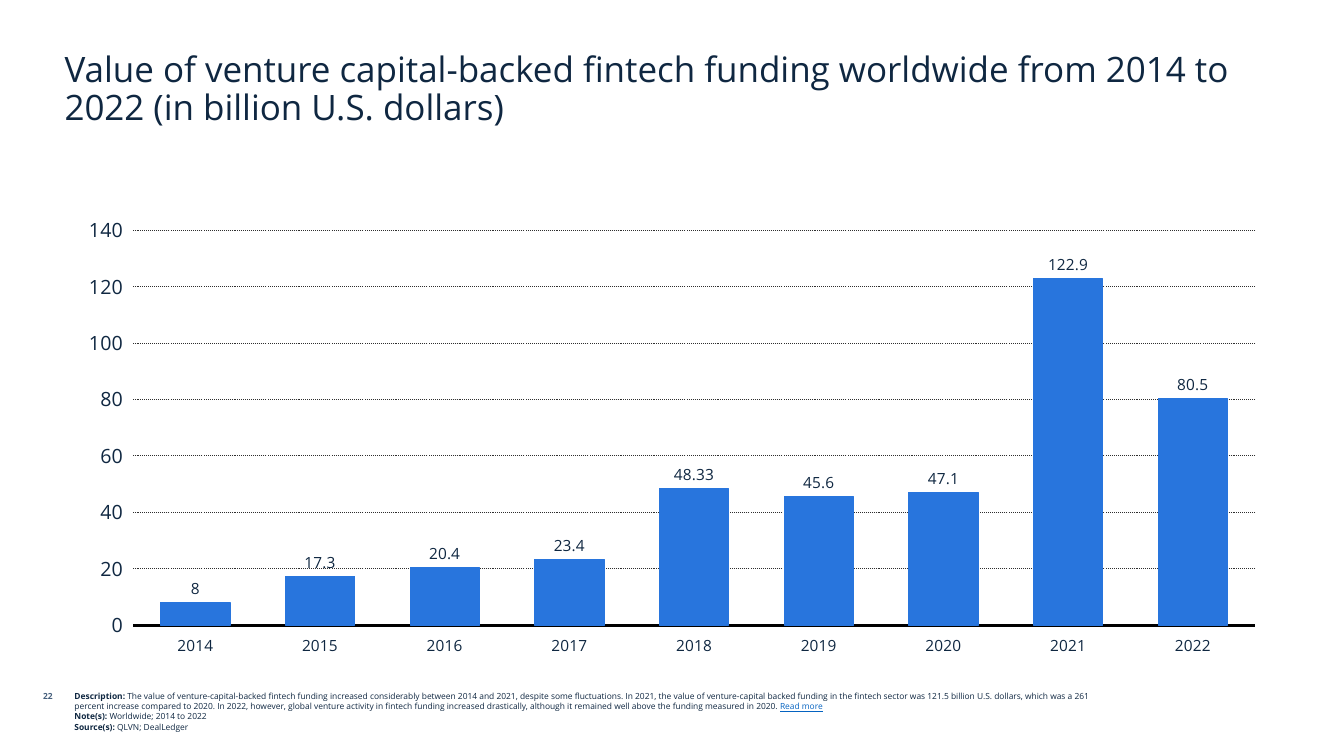
import pptx
import pptx.util
import pptx.chart.data
import pptx.dml.color
import pptx.enum.chart
import pptx.enum.dml
import pptx.enum.text

RGB = pptx.dml.color.RGBColor
NAVY = RGB(0x0F, 0x27, 0x41)
SLATE = RGB(0x45, 0x5F, 0x7C)
BLUE = RGB(0x28, 0x75, 0xDD)
LINK = RGB(0x05, 0x63, 0xC1)
GRID = RGB(0x2F, 0x2F, 0x2F)
BLACK = RGB(0, 0, 0)
FACE = "Open Sans"
WIDE, HIGH = pptx.util.Inches(13.33), pptx.util.Inches(7.5)
COLS, ROWS = 133.3, 75

FUNDS = {"2014": 8, "2015": 17.3, "2016": 20.4, "2017": 23.4, "2018": 48.33,
         "2019": 45.6, "2020": 47.1, "2021": 122.9, "2022": 80.5}
ABOUT = (
    "The value of venture-capital-backed fintech funding increased considerably "
    "between 2014 and 2021, despite some fluctuations. In 2021, the value of "
    "venture-capital backed funding in the fintech sector was 121.5 billion U.S. "
    "dollars, which was a 261 percent increase compared to 2020. In 2022, however, "
    "global venture activity in fintech funding increased drastically, although it "
    "remained well above the funding measured in 2020. ")
NOTES = [("Description: ", ABOUT, "Read more"),
         ("Note(s): ", "Worldwide; 2014 to 2022", ""),
         ("Source(s): ", "QLVN; DealLedger", "")]


def area(col, row, cols, rows):
    """Turn grid columns and rows into left, top, width and height."""
    return (int(WIDE * col / COLS), int(HIGH * row / ROWS),
            int(WIDE * cols / COLS), int(HIGH * rows / ROWS))


def style(font, size, color=NAVY, bold=False, under=None):
    """Format a font."""
    font.name, font.size, font.bold = FACE, pptx.util.Pt(size), bold
    font.color.rgb = color
    font.underline = under


def write(para, text, **look):
    """Add a formatted run to a paragraph."""
    run = para.add_run()
    run.text = text
    style(run.font, **look)


def frame(slide, box):
    """Add a wrapping text box and return its text frame."""
    text = slide.shapes.add_textbox(*box).text_frame
    text.word_wrap = True
    return text


def head(slide, box, text):
    """Place the slide title."""
    title = slide.shapes.title
    title.left, title.top, title.width, title.height = box
    body = title.text_frame
    body.word_wrap = True
    body.auto_size = pptx.enum.text.MSO_AUTO_SIZE.NONE
    body.vertical_anchor = pptx.enum.text.MSO_ANCHOR.BOTTOM
    para = body.paragraphs[0]
    para.alignment = pptx.enum.text.PP_ALIGN.LEFT
    para.line_spacing = 0.9
    write(para, text, size=25)


def bars(slide, box, funds):
    """Draw the column chart of yearly funding."""
    data = pptx.chart.data.CategoryChartData()
    data.categories = list(funds)
    data.add_series("Series 1", list(funds.values()))
    kind = pptx.enum.chart.XL_CHART_TYPE.COLUMN_CLUSTERED
    chart = slide.shapes.add_chart(kind, *box, data).chart
    chart.has_legend = chart.has_title = False
    style(chart.font, 11)
    plot = chart.plots[0]
    plot.gap_width, plot.overlap = 80, -30
    plot.vary_by_categories = False
    paint = plot.series[0].format
    paint.fill.solid()
    paint.fill.fore_color.rgb = BLUE
    paint.line.color.rgb = BLUE
    paint.line.width = pptx.util.Pt(0.75)

    plot.has_data_labels = True
    tags = plot.data_labels
    tags.show_value = True
    tags.position = pptx.enum.chart.XL_LABEL_POSITION.OUTSIDE_END
    style(tags.font, 11)

    years, scale = chart.category_axis, chart.value_axis
    for axis, size in ((years, 11), (scale, 14)):
        axis.major_tick_mark = pptx.enum.chart.XL_TICK_MARK.NONE
        axis.minor_tick_mark = pptx.enum.chart.XL_TICK_MARK.NONE
        axis.tick_label_position = pptx.enum.chart.XL_TICK_LABEL_POSITION.LOW
        style(axis.tick_labels.font, size)
    years.format.line.color.rgb = BLACK
    years.format.line.width = pptx.util.Pt(2)
    scale.minimum_scale = 0
    scale.tick_labels.number_format = "#,##0"
    scale.tick_labels.number_format_is_linked = False
    scale.format.line.fill.background()
    rule = scale.major_gridlines.format.line
    rule.color.rgb = GRID
    rule.width = pptx.util.Pt(0.75)
    rule.dash_style = pptx.enum.dml.MSO_LINE.ROUND_DOT


def notes(slide, box, rows):
    """Write the description, note and source lines."""
    text = frame(slide, box)
    for i, (label, body, more) in enumerate(rows):
        para = text.add_paragraph() if i else text.paragraphs[0]
        write(para, label, size=6, bold=True)
        write(para, body, size=6)
        if more:
            write(para, more, size=6, color=LINK, under=True)


def folio(slide, box, number):
    """Write the page number."""
    para = frame(slide, box).paragraphs[0]
    para.alignment = pptx.enum.text.PP_ALIGN.RIGHT
    write(para, number, size=6, color=SLATE, bold=True)


def main():
    """Build and save the slide."""
    deck = pptx.Presentation()
    deck.slide_width, deck.slide_height = WIDE, HIGH
    slide = deck.slides.add_slide(deck.slide_layouts[5])
    head(slide, area(5.4, 4.6, 122.4, 8.6),
         "Value of venture capital-backed fintech funding worldwide "
         "from 2014 to 2022 (in billion U.S. dollars)")
    bars(slide, area(6.4, 20.6, 120.5, 45.4), FUNDS)
    notes(slide, area(6.4, 68.1, 104.7, 5.8), NOTES)
    folio(slide, area(0, 68.1, 6.2, 3), "22")
    deck.save("out.pptx")


if __name__ == "__main__":
    main()
